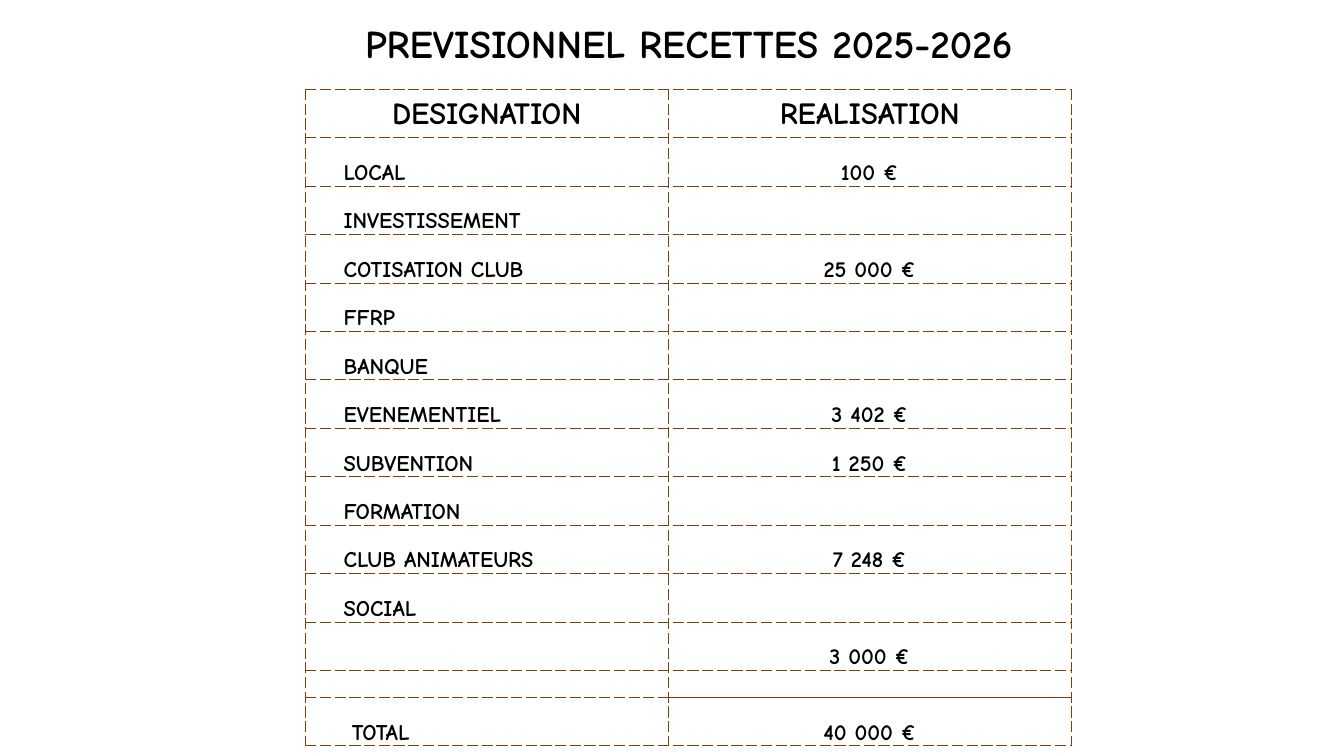
import dataclasses

import lxml.etree
import pptx
import pptx.dml.color
import pptx.enum.text
import pptx.oxml.ns
import pptx.util

Cm = pptx.util.Cm
Pt = pptx.util.Pt
Align = pptx.enum.text.PP_ALIGN
Anchor = pptx.enum.text.MSO_ANCHOR


@dataclasses.dataclass(frozen=True)
class Theme:
    font: str = "Comic Neue"
    text: str = "000000"
    border: str = "833C0C"
    title_size: int = 28
    header_size: int = 22
    body_size: int = 16
    spacer_size: int = 6


theme = Theme()


def write_cell(cell, text, size=theme.body_size, align=Align.CENTER,
               anchor=Anchor.BOTTOM, indent=0.03):
    cell.margin_left, cell.margin_right = Cm(indent), Cm(0.03)
    cell.margin_top, cell.margin_bottom = Cm(0.03), Cm(0)
    cell.vertical_anchor = anchor
    paragraph = cell.text_frame.paragraphs[0]
    paragraph.alignment = align
    if not text:
        # An empty cell keeps a small line so that its row does not grow
        paragraph._p.get_or_add_endParaRPr().set("sz", str(theme.spacer_size * 100))
        return
    run = paragraph.add_run()
    run.text = text
    run.font.name = theme.font
    run.font.size = Pt(size)
    run.font.bold = True
    run.font.color.rgb = pptx.dml.color.RGBColor.from_string(theme.text)


def set_border(cell, side, width=0.5, dash="dash"):
    qn = pptx.oxml.ns.qn
    line = lxml.etree.SubElement(cell._tc.get_or_add_tcPr(), qn("a:ln" + side))
    if not width:
        lxml.etree.SubElement(line, qn("a:noFill"))
        return
    line.set("w", str(Pt(width)))
    fill = lxml.etree.SubElement(line, qn("a:solidFill"))
    lxml.etree.SubElement(fill, qn("a:srgbClr")).set("val", theme.border)
    lxml.etree.SubElement(line, qn("a:prstDash")).set("val", dash)


presentation = pptx.Presentation()
presentation.slide_width = Cm(33.87)
presentation.slide_height = Cm(19.05)
slide = presentation.slides.add_slide(presentation.slide_layouts[6])

# Content: designation and amount
receipts = [
    ("LOCAL", "100 €"),
    ("INVESTISSEMENT", ""),
    ("COTISATION CLUB", "25 000 €"),
    ("FFRP", ""),
    ("BANQUE", ""),
    ("EVENEMENTIEL", "3 402 €"),
    ("SUBVENTION", "1 250 €"),
    ("FORMATION", ""),
    ("CLUB ANIMATEURS", "7 248 €"),
    ("SOCIAL", ""),
    ("", "3 000 €"),
]
rows = [
    ("PREVISIONNEL RECETTES 2025-2026", ""),
    ("", ""),
    ("DESIGNATION", "REALISATION"),
    *receipts,
    ("", ""),
    ("TOTAL", "40 000 €"),
]
title_row, gap_row, header_row = range(3)
total_row = len(rows) - 1
sum_row = total_row - 1

# Table grid
column_widths = [9.13, 10.18]
row_heights = [1.22] * len(rows)
row_heights[title_row] = 1.42
row_heights[gap_row] = 0.53
row_heights[sum_row] = 0.68
table = slide.shapes.add_table(
    len(rows), len(column_widths), Cm(7.7), Cm(0.3),
    Cm(sum(column_widths)), Cm(sum(row_heights))).table
table.first_row = False
table.horz_banding = False
for column, width in zip(table.columns, column_widths):
    column.width = Cm(width)
for row, height in zip(table.rows, row_heights):
    row.height = Cm(height)
table.cell(title_row, 0).merge(table.cell(title_row, 1))

# Text, borders and fills
for row_index, row in enumerate(rows):
    for column_index, text in enumerate(row):
        cell = table.cell(row_index, column_index)
        if row_index == title_row:
            write_cell(cell, text, size=theme.title_size)
        elif row_index == header_row:
            write_cell(cell, text, size=theme.header_size, anchor=Anchor.MIDDLE)
        elif column_index == 0:
            indent = 1.17 if row_index == total_row else 0.96
            write_cell(cell, text, align=Align.LEFT, indent=indent)
        else:
            write_cell(cell, text)

        for side in "LRTB":
            above_header = row_index < header_row
            if above_header and (row_index, side) != (gap_row, "B"):
                set_border(cell, side, width=0)
            elif column_index == 1 and (row_index, side) in ((sum_row, "B"), (total_row, "T")):
                set_border(cell, side, width=1, dash="solid")
            else:
                set_border(cell, side)
        cell.fill.background()

presentation.save("out.pptx")
